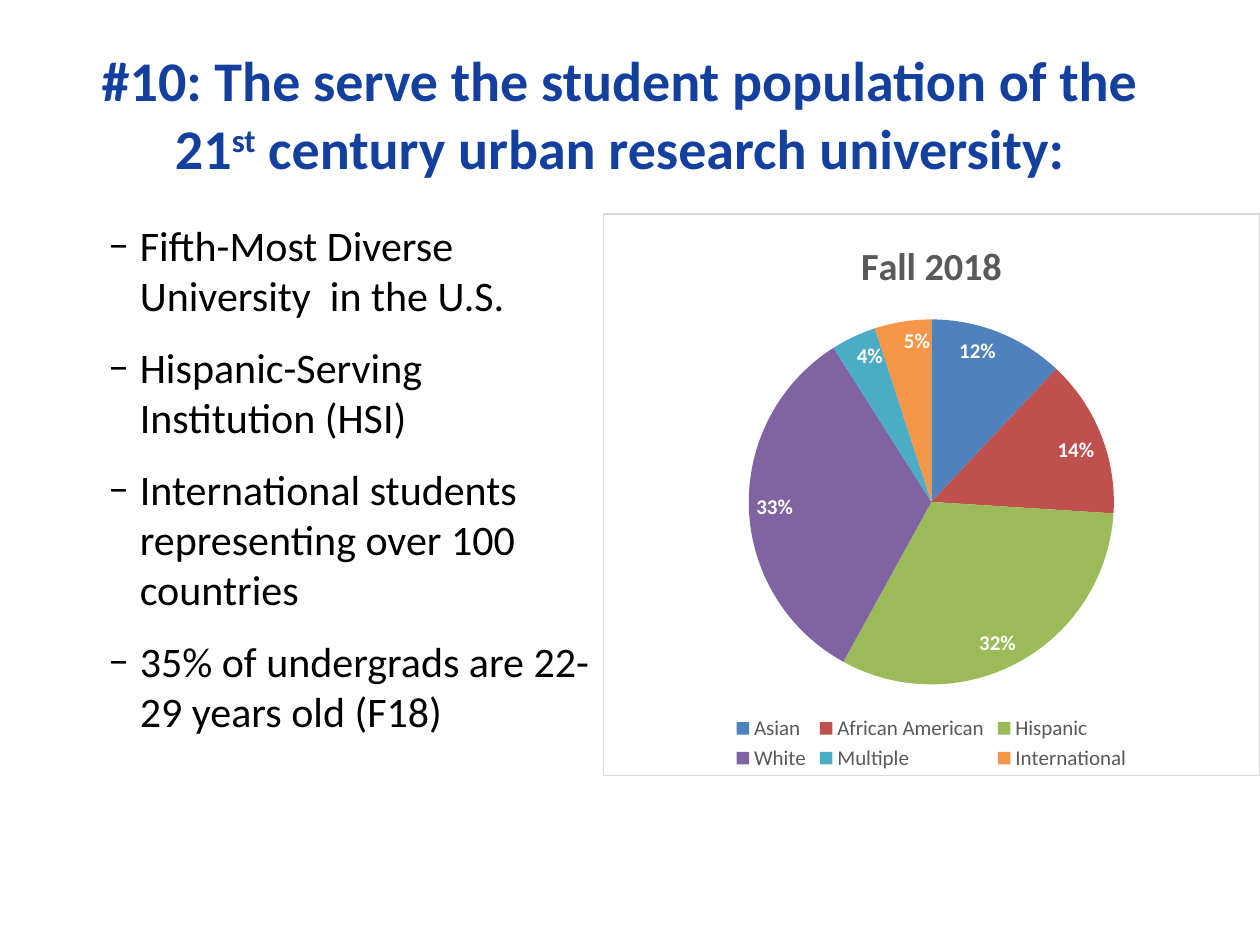
from lxml import etree
from pptx import Presentation
from pptx import util as u
from pptx.chart import data
from pptx.dml import color
from pptx.enum import chart as charts, text
from pptx.oxml import ns, parse_xml

FONT = "Calibri"
TITLE_RUNS = [("#10: The serve the student population of the 21", None),
              ("st", "30000"), (" century urban research university:", None)]
BULLETS = ["Fifth-Most Diverse University  in the U.S.",
           "Hispanic-Serving Institution (HSI)",
           "International students representing over 100 countries",
           "35% of undergrads are 22-29 years old (F18)"]
POPULATION = [("Asian", 12, "4F81BD"), ("African American", 14, "C0504D"),
              ("Hispanic", 32, "9BBB59"), ("White", 33, "8064A2"),
              ("Multiple", 4, "4BACC6"), ("International", 5, "F79646")]


def rgb(value):
    """Turn a hex string into a colour."""
    return color.RGBColor.from_string(value)


def set_format(target, values):
    """Set each attribute of the target from a dict."""
    for name, value in values.items():
        setattr(target, name, value)


def set_font(font, size, hex_color, bold=False):
    """Set the face, size, weight and colour of a font."""
    set_format(font, {"name": FONT, "size": u.Pt(size), "bold": bold})
    font.color.rgb = rgb(hex_color)


def add_frame(slide, box):
    """Add a wrapping, top-anchored text box and return its frame."""
    frame = slide.shapes.add_textbox(*map(u.Cm, box)).text_frame
    set_format(frame, {"word_wrap": True, "vertical_anchor": text.MSO_ANCHOR.TOP})
    return frame


def add_title(slide, box):
    """Write the centred heading with its raised ordinal."""
    paragraph = add_frame(slide, box).paragraphs[0]
    paragraph.alignment = text.PP_ALIGN.CENTER
    for wording, baseline in TITLE_RUNS:
        run = paragraph.add_run()
        run.text = wording
        set_font(run.font, 32, "13409F", True)
        if baseline:
            run.font._element.set("baseline", baseline)


def add_bullets(slide, box):
    """Write the dashed list of facts."""
    frame = add_frame(slide, box)
    for index, wording in enumerate(BULLETS):
        paragraph = frame.add_paragraph() if index else frame.paragraphs[0]
        set_format(paragraph, {"text": wording, "level": 1, "space_after": u.Pt(12)})
        properties = paragraph._p.get_or_add_pPr()
        properties.set("marL", str(u.Cm(1.3)))
        properties.set("indent", str(u.Cm(-0.64)))
        etree.SubElement(properties, ns.qn("a:buFont")).set("typeface", FONT)
        etree.SubElement(properties, ns.qn("a:buChar")).set("char", "–")
        set_font(paragraph.runs[0].font, 24, "000000")


def add_border(chart, hex_color, width):
    """Give the chart area a white fill and a thin outline."""
    border = parse_xml(
        f'<c:spPr {ns.nsdecls("c", "a")}>'
        '<a:solidFill><a:srgbClr val="FFFFFF"/></a:solidFill>'
        f'<a:ln w="{u.Pt(width)}"><a:solidFill><a:srgbClr val="{hex_color}"/>'
        '</a:solidFill></a:ln></c:spPr>')
    chart._chartSpace.find(ns.qn("c:chart")).addnext(border)


def add_population_chart(slide, box):
    """Draw the pie of student groups with its title, labels and legend."""
    names, values, colors = zip(*POPULATION)
    chart_data = data.CategoryChartData()
    chart_data.categories = names
    chart_data.add_series("Fall 2018", values)
    chart = slide.shapes.add_chart(
        charts.XL_CHART_TYPE.PIE, *map(u.Cm, box), chart_data).chart
    set_font(chart.font, 10, "000000")
    set_format(chart, {"has_title": True, "has_legend": True})
    add_border(chart, "D9D9D9", 0.75)

    heading = chart.chart_title.text_frame
    heading.text = "Fall 2018"
    set_font(heading.paragraphs[0].runs[0].font, 22, "595959", True)

    set_format(chart.legend, {"position": charts.XL_LEGEND_POSITION.BOTTOM,
                              "include_in_layout": False})
    set_font(chart.legend.font, 12, "595959")

    plot = chart.plots[0]
    set_format(plot, {"vary_by_categories": True, "has_data_labels": True})
    set_format(plot.data_labels, {
        "show_percentage": True, "show_value": False, "number_format": "0%",
        "number_format_is_linked": False,
        "position": charts.XL_LABEL_POSITION.INSIDE_END})
    set_font(plot.data_labels.font, 12, "FFFFFF", True)
    for index, hex_color in enumerate(colors):
        fill = plot.series[0].points[index].format.fill
        fill.solid()
        fill.fore_color.rgb = rgb(hex_color)


def main():
    """Build the slide and save it."""
    presentation = Presentation()
    set_format(presentation, {"slide_width": u.Cm(25.4), "slide_height": u.Cm(19.05)})
    slide = presentation.slides.add_slide(presentation.slide_layouts[6])
    add_bullets(slide, (1.27, 4.3, 11, 12.73))
    add_title(slide, (1.2, 0.8, 22.6, 4.36))
    add_population_chart(slide, (12.15, 4.3, 13.25, 11.35))
    presentation.save("out.pptx")


if __name__ == "__main__":
    main()
